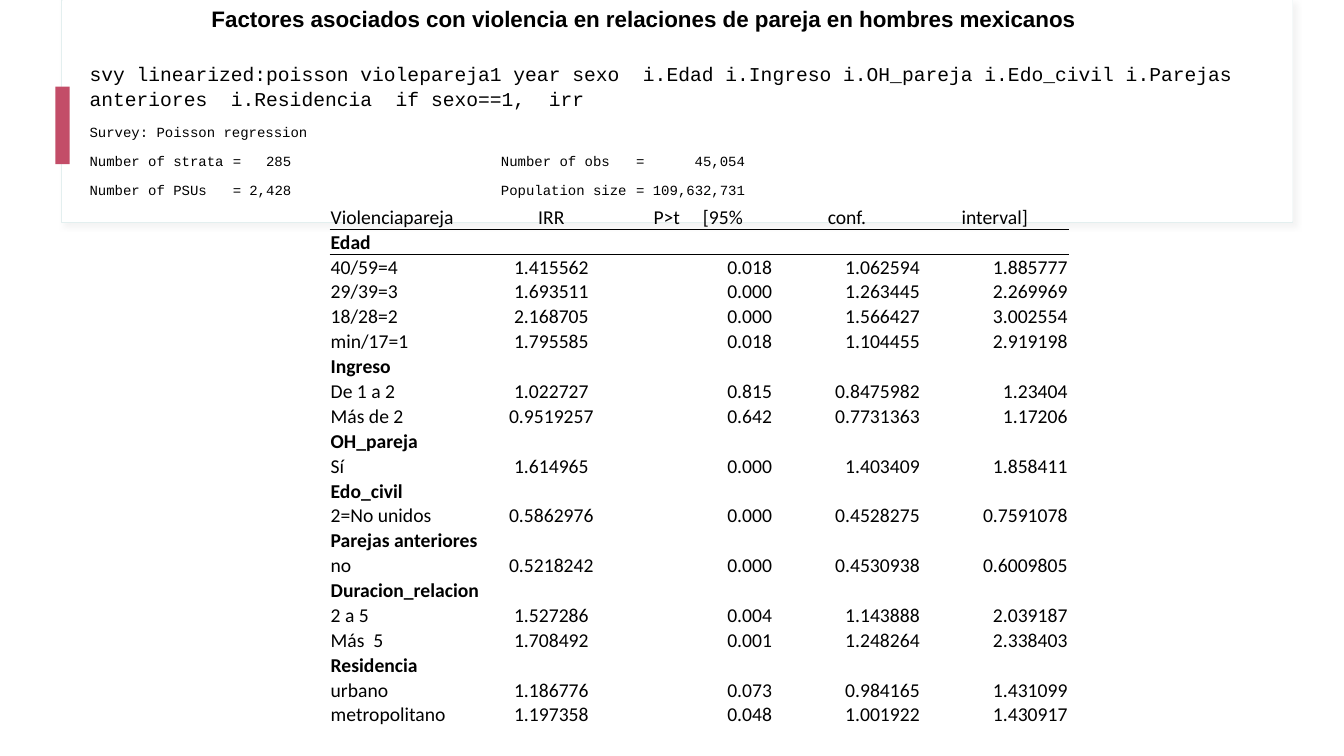
"""Build the slide of Poisson regression results on partner violence in Mexican men."""
import pptx
import pptx.util
import pptx.dml.color
import pptx.enum.shapes
import pptx.enum.text
import pptx.oxml
import pptx.oxml.ns
from dataclasses import dataclass
from lxml import etree

TITLE = "Factores asociados con violencia en relaciones de pareja en hombres mexicanos"
COMMAND = ("svy linearized:poisson violepareja1 year sexo  i.Edad i.Ingreso i.OH_pareja "
           "i.Edo_civil i.Parejas anteriores  i.Residencia  if sexo==1,  irr")
SURVEY = [
    ("Survey: Poisson regression",),
    ("Number of strata", "=", "285", "Number of obs", "=", "45,054"),
    ("Number of PSUs", "=", "2,428", "Population size", "=", "109,632,731"),
]
HEADER = ("Violenciapareja", "IRR", "\tP>t\t[95%", "conf.", "interval]")
GROUPS = {
    "Edad": [
        ("40/59=4", "1.415562", "0.018", "1.062594", "1.885777"),
        ("29/39=3", "1.693511", "0.000", "1.263445", "2.269969"),
        ("18/28=2", "2.168705", "0.000", "1.566427", "3.002554"),
        ("min/17=1", "1.795585", "0.018", "1.104455", "2.919198"),
    ],
    "Ingreso": [
        ("De 1 a 2", "1.022727", "0.815", "0.8475982", "1.23404"),
        ("Más de 2", "0.9519257", "0.642", "0.7731363", "1.17206"),
    ],
    "OH_pareja": [("Sí", "1.614965", "0.000", "1.403409", "1.858411")],
    "Edo_civil": [("2=No unidos", "0.5862976", "0.000", "0.4528275", "0.7591078")],
    "Parejas anteriores": [("no", "0.5218242", "0.000", "0.4530938", "0.6009805")],
    "Duracion_relacion": [
        ("2 a 5", "1.527286", "0.004", "1.143888", "2.039187"),
        ("Más  5", "1.708492", "0.001", "1.248264", "2.338403"),
    ],
    "Residencia": [
        ("urbano", "1.186776", "0.073", "0.984165", "1.431099"),
        ("metropolitano", "1.197358", "0.048", "1.001922", "1.430917"),
    ],
}
WIDE_GROUPS = ("Parejas anteriores", "Duracion_relacion")

PANEL_AT = (0.61, 0, 12.21, 2.21)
INNER_AT = (0.62, 0, 12.2, 2.2)
MARKER_AT = (0.55, 0.86, 0.14, 0.77)
TITLE_AT = (1.06, 0, 10.65, 0.37)
OUTPUT_AT = (0.79, 0.55, 11.75, 1.48)
TABLE_AT = (3.27, 2.03, 7.33, 5.05)
SURVEY_TABS = [(1.42, "l"), (2, "r"), (4.08, "l"), (5.42, "l"), (6.5, "r")]
HEADER_TABS = [(0.27, "l"), (0.76, "l")]
NO_STYLE = "{2D5ABB26-0587-4C30-8999-92F81FD0307C}"

ALIGN = pptx.enum.text.PP_ALIGN
ANCHOR = pptx.enum.text.MSO_ANCHOR


@dataclass(frozen=True)
class Theme:
    ink: str = "000000"
    paper: str = "FFFFFF"
    edge: str = "E3EFEF"
    shade: str = "D9D9D9"
    marker: str = "C34D68"
    title_font: str = "Arial"
    code_font: str = "Courier New"
    table_font: str = "Calibri"
    title_size: int = 16
    body_size: int = 14
    small_size: int = 10


THEME = Theme()


def color(code):
    return pptx.dml.color.RGBColor.from_string(code)


def inches(values):
    return [pptx.util.Inches(value) for value in values]


def xml(body):
    namespace = pptx.oxml.ns.nsdecls("a")
    return pptx.oxml.parse_xml(body.replace(" ", f" {namespace} ", 1))


def add_span(para, text, font, size, bold=False):
    span = para.add_run()
    span.text = text
    span.font.name = font
    span.font.size = pptx.util.Pt(size)
    span.font.bold = bold
    span.font.color.rgb = color(THEME.ink)


def add_tabs(para, stops):
    tabs = "".join(f'<a:tab pos="{pptx.util.Inches(place)}" algn="{side}"/>'
                   for place, side in stops)
    para._p.get_or_add_pPr().append(xml(f'<a:tabLst >{tabs}</a:tabLst>'))


def add_block(page, place, fill):
    kind = pptx.enum.shapes.MSO_SHAPE.RECTANGLE
    block = page.shapes.add_shape(kind, *inches(place))
    block.shadow.inherit = False
    block.fill.solid()
    block.fill.fore_color.rgb = color(fill)
    block.line.fill.background()
    return block


def add_panel(page):
    panel = add_block(page, PANEL_AT, THEME.paper)
    panel.line.color.rgb = color(THEME.edge)
    panel.line.width = pptx.util.Pt(0.75)
    effects = panel._element.spPr.find(pptx.oxml.ns.qn("a:effectLst"))
    effects.append(xml(
        f'<a:outerShdw blurRad="{pptx.util.Pt(4)}" dist="{pptx.util.Pt(3)}" dir="2700000">'
        f'<a:srgbClr val="{THEME.shade}"><a:alpha val="30000"/></a:srgbClr></a:outerShdw>'))
    add_block(page, INNER_AT, THEME.paper)
    add_block(page, MARKER_AT, THEME.marker)


def add_title(page):
    title = page.shapes.title
    title.left, title.top, title.width, title.height = inches(TITLE_AT)
    frame = title.text_frame
    frame.word_wrap = True
    frame.auto_size = pptx.enum.text.MSO_AUTO_SIZE.NONE
    frame.vertical_anchor = ANCHOR.TOP
    para = frame.paragraphs[0]
    para.alignment = ALIGN.CENTER
    add_span(para, TITLE, THEME.title_font, THEME.title_size, True)


def add_output(page):
    frame = page.shapes.add_textbox(*inches(OUTPUT_AT)).text_frame
    frame.word_wrap = True
    lines = [(COMMAND, THEME.body_size)]
    lines += [("\t".join(parts), THEME.small_size) for parts in SURVEY]
    for index, (text, size) in enumerate(lines):
        para = frame.add_paragraph() if index else frame.paragraphs[0]
        para.line_spacing = 1.07
        para.space_after = pptx.util.Pt(8)
        if "\t" in text:
            add_tabs(para, SURVEY_TABS)
        add_span(para, text, THEME.code_font, size)


def fill_cell(cell, text, align, bold):
    cell.fill.background()
    cell.vertical_anchor = ANCHOR.BOTTOM
    cell.margin_left = cell.margin_right = cell.margin_top = pptx.util.Inches(0.01)
    cell.margin_bottom = 0
    para = cell.text_frame.paragraphs[0]
    para.alignment = align
    if "\t" in text:
        add_tabs(para, HEADER_TABS)
    if text:
        add_span(para, text, THEME.table_font, THEME.body_size, bold)
    else:
        para._p.append(xml(f'<a:endParaRPr sz="{THEME.body_size * 100}"/>'))


def add_rule(cell, side):
    line = xml(f'<a:{side} w="{pptx.util.Pt(0.5)}"><a:solidFill>'
               f'<a:srgbClr val="{THEME.ink}"/></a:solidFill></a:{side}>')
    cell._tc.get_or_add_tcPr().insert(0, line)


def add_results(page):
    rows = [HEADER]
    for group, results in GROUPS.items():
        rows += [(group, "", "", "", ""), *results]
    shape = page.shapes.add_table(len(rows), len(HEADER), *inches(TABLE_AT))
    table = shape.table
    table.first_row = table.horz_banding = False
    table._tbl.tblPr.find(pptx.oxml.ns.qn("a:tableStyleId")).text = NO_STYLE
    header_aligns = [ALIGN.LEFT, ALIGN.CENTER, ALIGN.LEFT, ALIGN.CENTER, ALIGN.CENTER]
    result_aligns = [ALIGN.LEFT, ALIGN.CENTER] + [ALIGN.RIGHT] * 3
    for row, texts in enumerate(rows):
        aligns = result_aligns if row else header_aligns
        for column, text in enumerate(texts):
            cell = table.cell(row, column)
            fill_cell(cell, text, aligns[column], text in GROUPS)
            if row < 2:
                add_rule(cell, "lnT" if row else "lnB")
        if texts[0] in WIDE_GROUPS:
            table.cell(row, 0).merge(table.cell(row, 1))


def main():
    deck = pptx.Presentation()
    deck.slide_width, deck.slide_height = inches((13.33, 7.5))
    page = deck.slides.add_slide(deck.slide_layouts[5])
    add_panel(page)
    add_results(page)
    add_output(page)
    add_title(page)
    title = page.shapes.title._element
    title.getparent().append(title)
    deck.save("out.pptx")


if __name__ == "__main__":
    main()
